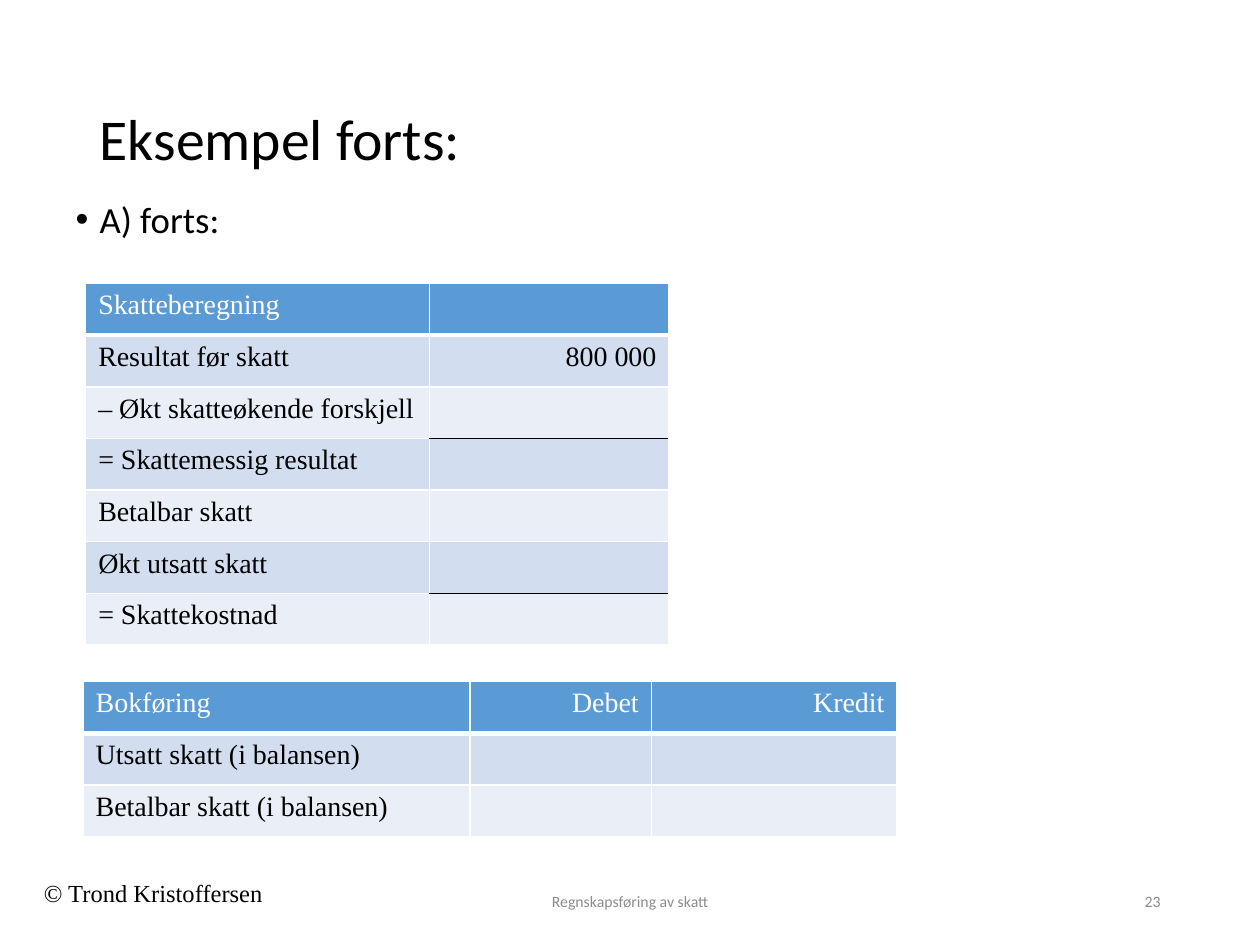
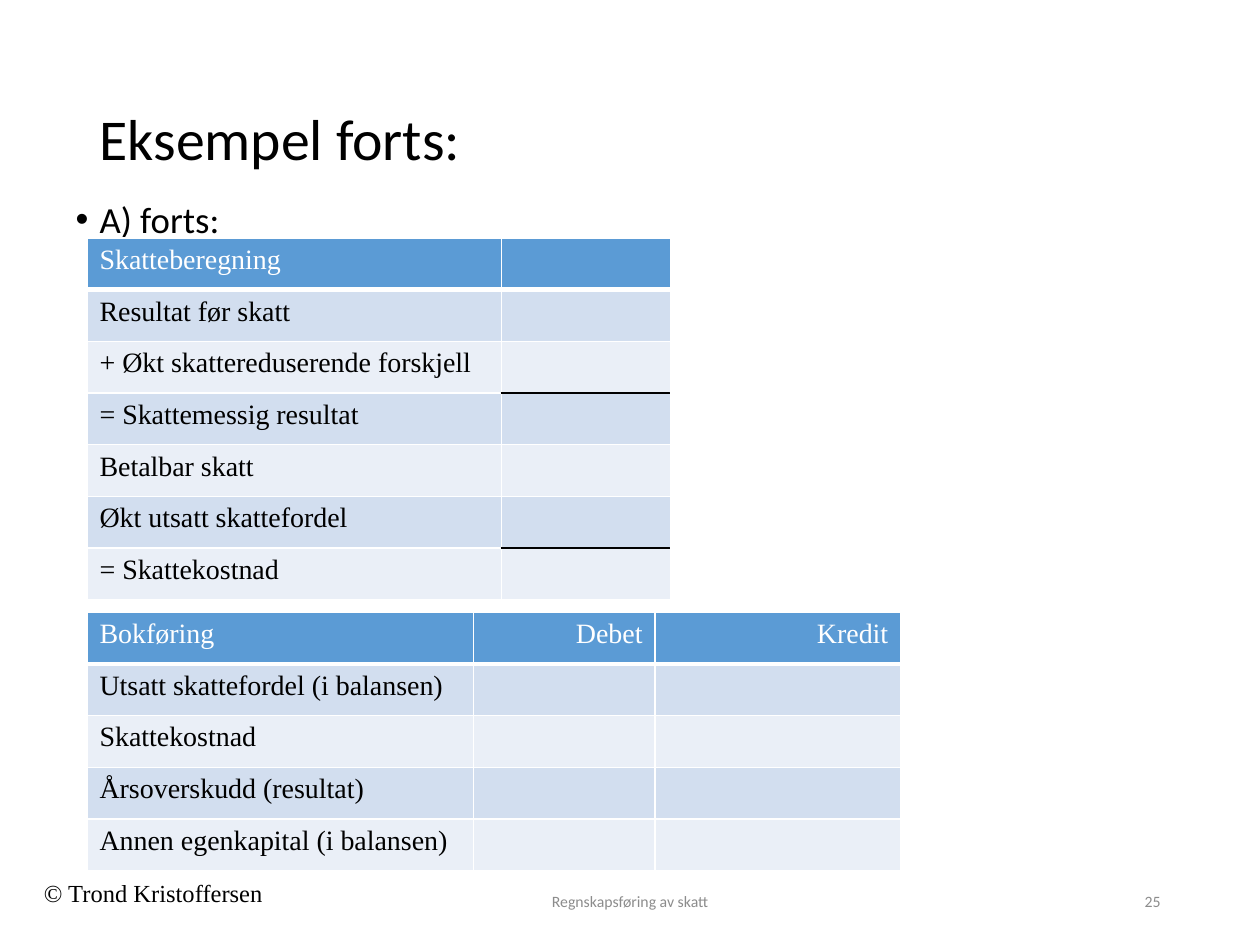
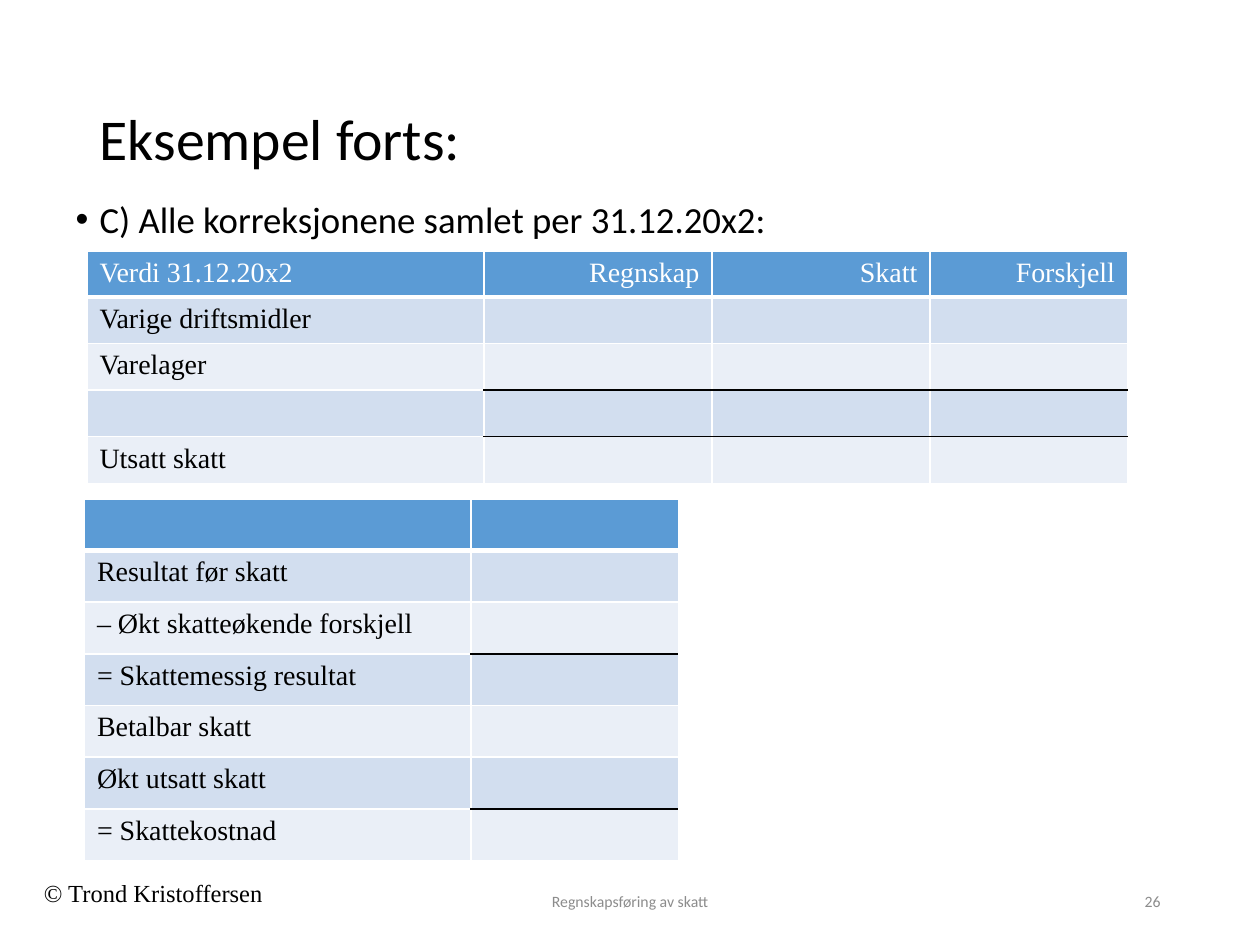
from lxml import etree
from pptx import Presentation
from pptx.dml.color import RGBColor
from pptx.enum.text import MSO_ANCHOR, MSO_AUTO_SIZE, PP_ALIGN
from pptx.oxml.ns import qn
from pptx.util import Inches, Pt

LEFT, CENTER, RIGHT = PP_ALIGN.LEFT, PP_ALIGN.CENTER, PP_ALIGN.RIGHT
TOP, MIDDLE = MSO_ANCHOR.TOP, MSO_ANCHOR.MIDDLE
NO_AUTOFIT = MSO_AUTO_SIZE.NONE

BLACK, WHITE, GRAY = "000000", "FFFFFF", "8C8C8C"
HEADER_FILL = "5B9BD5"
BAND_FILLS = ("D2DEEF", "EAEFF7")

TITLE_FONT = {"name": "Calibri", "size": Pt(33), "bold": False}
BODY_FONT = {"name": "Calibri", "size": Pt(21)}
FOOTER_FONT = {"name": "Calibri", "size": Pt(9)}
COPYRIGHT_FONT = {"name": "Times New Roman", "size": Pt(14)}
TABLE_FONT = {"name": "Times New Roman", "size": Pt(16), "bold": False}

TITLE = "Eksempel forts:"
ROW_HEIGHT = 0.41
POSTING_COLUMNS = (3.07, 1.44, 1.95)
POSTING_HEADER = ("Bokføring", "Debet", "Kredit")
TAX_RULES = (2, 5)


def color(hex_value):
    return RGBColor.from_string(hex_value)


def set_attributes(target, values):
    for name, value in values.items():
        setattr(target, name, value)


def place(shape, left, top, width, height):
    set_attributes(shape, {"left": Inches(left), "top": Inches(top),
                           "width": Inches(width), "height": Inches(height)})


def write(text_frame, text, font, text_color=BLACK, alignment=LEFT):
    """Fill the first paragraph with one formatted run and return the paragraph."""
    paragraph = text_frame.paragraphs[0]
    paragraph.alignment = alignment
    run = paragraph.add_run()
    run.text = text
    set_attributes(run.font, font)
    run.font.color.rgb = color(text_color)
    return paragraph


def fill_placeholder(shape, position, text, font, anchor):
    place(shape, *position)
    set_attributes(shape.text_frame, {"auto_size": NO_AUTOFIT, "word_wrap": True,
                                      "vertical_anchor": anchor})
    paragraph = write(shape.text_frame, text, font)
    paragraph.line_spacing = 0.9
    return paragraph


def add_label(slide, position, text, font, text_color, alignment, anchor):
    text_box = slide.shapes.add_textbox(*map(Inches, position))
    set_attributes(text_box.text_frame, {"word_wrap": True, "vertical_anchor": anchor})
    write(text_box.text_frame, text, font, text_color, alignment)


def add_slide(presentation, bullet_text, number, body_size=(8.52, 1.18)):
    """Add a slide with title, bullet and the shared footer line."""
    slide = presentation.slides.add_slide(presentation.slide_layouts[1])
    title, body = slide.placeholders
    fill_placeholder(title, (0.69, 0.4, 8.62, 1.45), TITLE, TITLE_FONT, MIDDLE)
    bullet = fill_placeholder(body, (0.5, 1.55, *body_size), bullet_text, BODY_FONT, TOP)
    bullet.space_before = Pt(7.5)
    properties = bullet._p.get_or_add_pPr()
    properties.set("marL", str(Inches(0.19)))
    properties.set("indent", str(-Inches(0.19)))
    etree.SubElement(properties, qn("a:buFont"), typeface="Arial")
    etree.SubElement(properties, qn("a:buChar"), char="•")

    add_label(slide, (0.25, 6.92, 2.08, 0.33), "© Trond Kristoffersen",
              COPYRIGHT_FONT, BLACK, LEFT, TOP)
    add_label(slide, (3.31, 6.95, 3.38, 0.4), "Regnskapsføring av skatt",
              FOOTER_FONT, GRAY, CENTER, MIDDLE)
    add_label(slide, (7.06, 6.95, 2.25, 0.4), str(number),
              FOOTER_FONT, GRAY, RIGHT, MIDDLE)
    return slide


def add_border(cell, side, line_color, width):
    line = etree.SubElement(cell._tc.get_or_add_tcPr(), qn(f"a:ln{side}"),
                            w=str(Pt(width)))
    fill = etree.SubElement(line, qn("a:solidFill"))
    etree.SubElement(fill, qn("a:srgbClr"), val=line_color)


def format_cell(cell, text, fill_color, text_color, alignment, borders):
    for side, (line_color, width) in borders.items():
        add_border(cell, side, line_color, width)
    cell.fill.solid()
    cell.fill.fore_color.rgb = color(fill_color)
    if text:
        write(cell.text_frame, text, TABLE_FONT, text_color, alignment)
    else:
        etree.SubElement(cell.text_frame.paragraphs[0]._p, qn("a:endParaRPr"),
                         sz=str(int(TABLE_FONT["size"].pt * 100)))


def add_grid(slide, left, top, columns, rows, rules=(), shaded=None, heights=None):
    """Add a banded table.

    rules: rows with a black line below their amounts.
    shaded: number of coloured columns; the others stay white.
    """
    shaded = shaded or len(columns)
    heights = heights or [ROW_HEIGHT] * len(rows)
    frame = slide.shapes.add_table(len(rows), len(columns), Inches(left), Inches(top),
                                   Inches(sum(columns)), Inches(sum(heights)))
    table = frame.table
    set_attributes(table, {"first_row": False, "horz_banding": False})
    for column, width in zip(table.columns, columns):
        column.width = Inches(width)
    for row, height in zip(table.rows, heights):
        row.height = Inches(height)

    for row_index, texts in enumerate(rows):
        is_header = row_index == 0
        row_fill = HEADER_FILL if is_header else BAND_FILLS[(row_index - 1) % 2]
        for column_index in range(len(columns)):
            text = texts[column_index] if column_index < len(texts) else ""
            is_amount = 0 < column_index < shaded
            borders = dict.fromkeys("LRTB", (WHITE, 1))
            if is_header:
                borders["B"] = (WHITE, 3)
            if is_amount and row_index - 1 in rules:
                borders["T"] = (BLACK, 1)
            if is_amount and row_index in rules:
                borders["B"] = (BLACK, 1)
            format_cell(table.cell(row_index, column_index), text,
                        row_fill if column_index < shaded else WHITE,
                        WHITE if is_header else BLACK,
                        RIGHT if column_index else LEFT, borders)


def add_tax_calculation(slide, left, top, columns, heading="Skatteberegning", result="",
                        difference="– Økt skatteøkende forskjell",
                        deferred="Økt utsatt skatt"):
    rows = [(heading,), ("Resultat før skatt", result), (difference,),
            ("= Skattemessig resultat",), ("Betalbar skatt",), (deferred,),
            ("= Skattekostnad",)]
    add_grid(slide, left, top, columns, rows, TAX_RULES, shaded=2)


def add_posting(slide, left, top, accounts):
    rows = [POSTING_HEADER] + [(account,) for account in accounts]
    add_grid(slide, left, top, POSTING_COLUMNS, rows)


def main():
    presentation = Presentation()
    set_attributes(presentation, {"slide_width": Inches(10), "slide_height": Inches(7.5)})

    slide = add_slide(presentation, "A) forts:", 23)
    add_tax_calculation(slide, 0.68, 2.25, (2.73, 1.9, 2.99), result="800 000")
    add_posting(slide, 0.66, 5.41,
                ["Utsatt skatt (i balansen)", "Betalbar skatt (i balansen)"])

    slide = add_slide(presentation, "A) forts:", 25)
    add_tax_calculation(slide, 0.69, 1.89, (3.29, 1.34, 2.99),
                        difference="+ Økt skattereduserende forskjell",
                        deferred="Økt utsatt skattefordel")
    add_posting(slide, 0.69, 4.86,
                ["Utsatt skattefordel (i balansen)", "Skattekostnad",
                 "Årsoverskudd (resultat)", "Annen egenkapital (i balansen)"])

    slide = add_slide(presentation, "C) Alle korreksjonene samlet per 31.12.20x2:", 26,
                      body_size=(8.44, 0.53))
    add_grid(slide, 0.69, 1.99, (3.15, 1.81, 1.73, 1.57),
             [("Verdi 31.12.20x2", "Regnskap", "Skatt", "Forskjell"),
              ("Varige driftsmidler",), ("Varelager",), (), ("Utsatt skatt",)],
             rules=(2, 3), heights=[0.34] + [0.37] * 4)
    add_tax_calculation(slide, 0.67, 3.96, (3.07, 1.65, 3.86), heading="")

    presentation.save("out.pptx")


if __name__ == "__main__":
    main()
